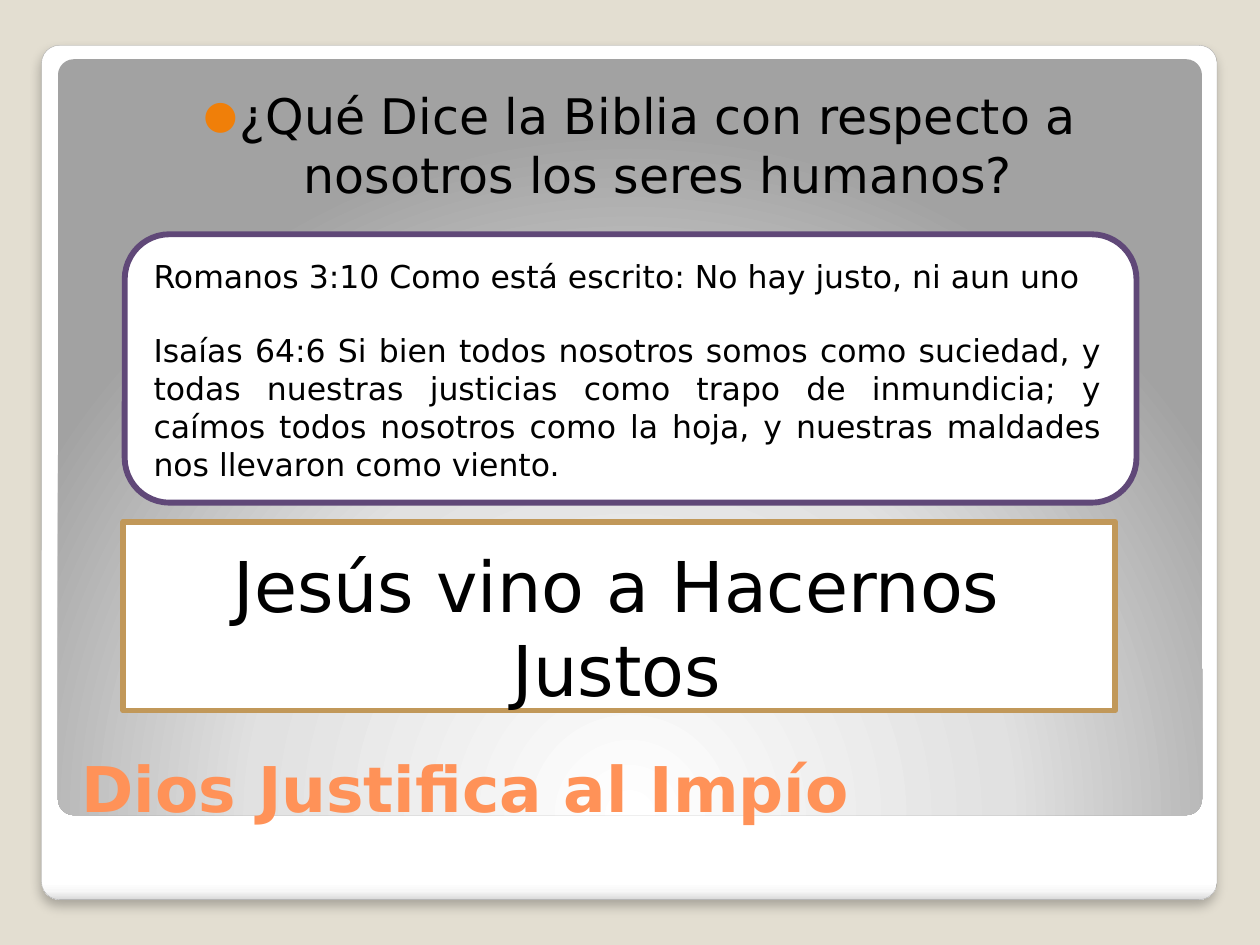
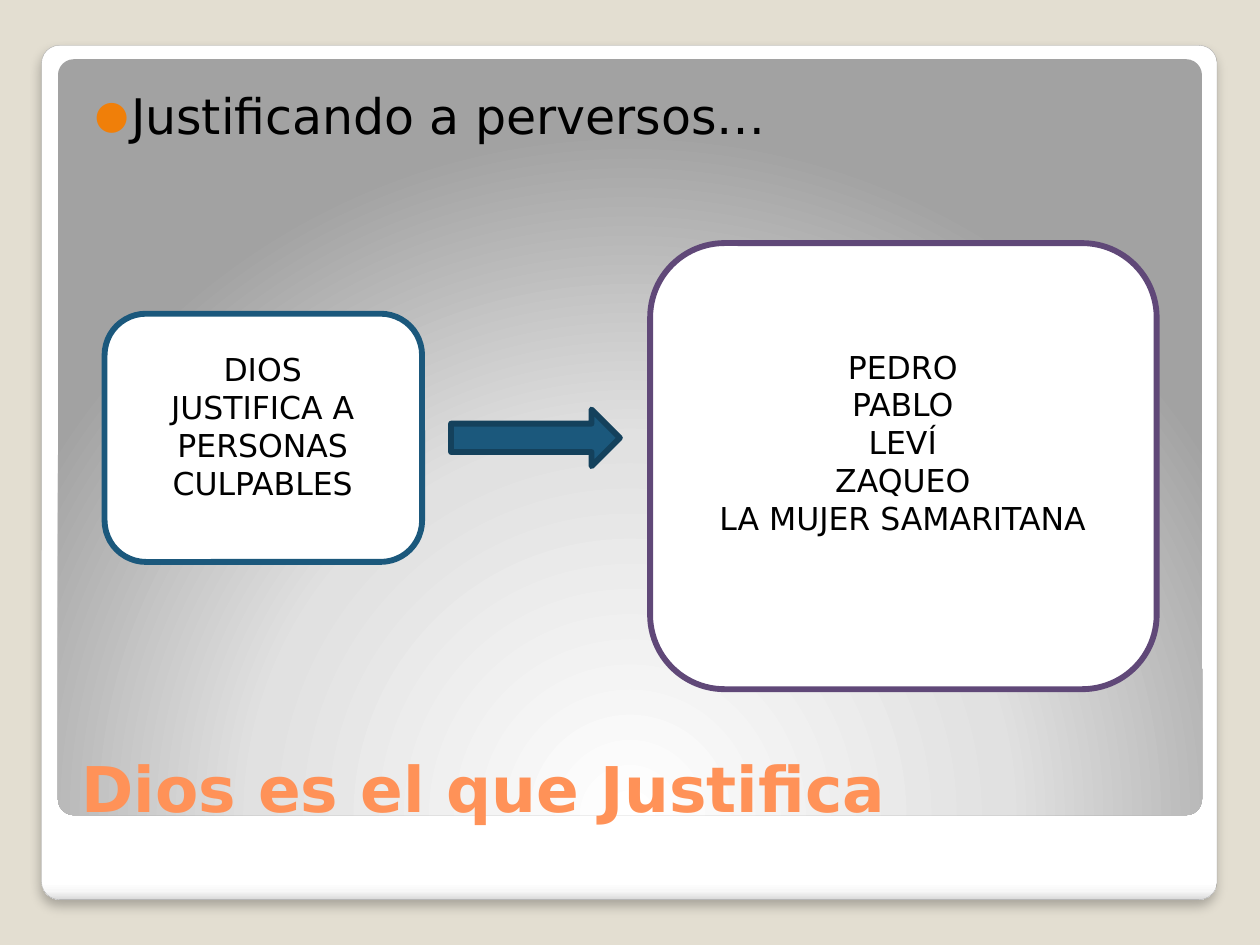
from dataclasses import dataclass

from lxml.etree import SubElement, fromstring
from pptx import Presentation
from pptx.dml.color import RGBColor
from pptx.enum.shapes import MSO_SHAPE
from pptx.enum.text import MSO_ANCHOR, PP_ALIGN
from pptx.oxml.ns import nsdecls, qn
from pptx.util import Inches, Pt


@dataclass(frozen=True)
class Theme:
    font: str = "DejaVu Sans"
    background: str = "E3DED1"
    frame_line: str = "A4A4A4"
    title: str = "FF9258"
    bullet: str = "F07F09"
    text: str = "000000"
    white: str = "FFFFFF"
    gold: str = "C19859"
    purple: str = "604878"
    blue: str = "1B587C"
    dark_blue: str = "14415C"
    title_size: float = 36
    question_size: float = 28
    banner_size: float = 40
    body_size: float = 18
    outline: float = 3.35
    hairline: float = 0.16
    corner: float = 0.021


THEME = Theme()
FRAME_STOPS = [(0, "FFFFFF"), (98, "FFFFFF"), (99, "F7F7F7"), (100, "DADADA")]
PANEL_STOPS = [(0, "FFFFFF"), (55, "E1E1E1"), (100, "A2A2A2")]
LINEAR = '<a:lin ang="5400000" scaled="0"/>'
RADIAL = ('<a:path path="circle">'
          '<a:fillToRect l="50000" t="175000" r="50000" b="-75000"/></a:path>')
SHADOW = ('<a:effectLst {}><a:outerShdw blurRad="76200" dist="50800" dir="5400000" '
          'algn="tl" rotWithShape="0"><a:srgbClr val="000000"><a:alpha val="25000"/>'
          '</a:srgbClr></a:outerShdw></a:effectLst>')

SLIDES = [
    {
        "title": "Dios Justifica al Impío",
        "lead": "¿Qué Dice la Biblia con respecto a nosotros los seres humanos?",
        "lead_align": PP_ALIGN.CENTER,
        "shapes": [
            (MSO_SHAPE.RECTANGLE, (0.98, 4.14, 7.87, 1.5), THEME.white, THEME.gold),
            (MSO_SHAPE.ROUNDED_RECTANGLE, (0.99, 1.86, 8.03, 2.13), THEME.white, THEME.purple),
        ],
        "texts": [
            ((0.96, 4.26, 7.87, 1.45), ["Jesús vino a Hacernos Justos"],
             THEME.banner_size, PP_ALIGN.CENTER, 0),
            ((1.12, 1.99, 7.72, 2.83), [
                "Romanos 3:10 Como está escrito: No hay justo, ni aun uno",
                "Isaías 64:6 Si bien todos nosotros somos como suciedad, y todas nuestras "
                "justicias como trapo de inmundicia; y caímos todos nosotros como la hoja, "
                "y nuestras maldades nos llevaron como viento.",
            ], THEME.body_size, PP_ALIGN.JUSTIFY, 21),
        ],
    },
    {
        "title": "Dios es el que Justifica",
        "lead": "Justificando a perversos…",
        "lead_align": PP_ALIGN.LEFT,
        "shapes": [
            (MSO_SHAPE.ROUNDED_RECTANGLE, (0.83, 2.49, 2.52, 1.97), THEME.white, THEME.blue),
            (MSO_SHAPE.RIGHT_ARROW, (3.58, 3.25, 1.34, 0.45), THEME.blue, THEME.dark_blue),
            (MSO_SHAPE.ROUNDED_RECTANGLE, (5.16, 1.93, 4.02, 3.54), THEME.white, THEME.purple),
        ],
        "texts": [
            ((1.06, 2.73, 2.05, 1.31), ["DIOS JUSTIFICA A PERSONAS CULPABLES"],
             THEME.body_size, PP_ALIGN.CENTER, 0),
            ((5.51, 2.71, 3.31, 1.92),
             ["PEDRO", "PABLO", "LEVÍ", "ZAQUEO", "LA MUJER SAMARITANA"],
             THEME.body_size, PP_ALIGN.CENTER, 0),
        ],
    },
]


def color(value):
    return RGBColor.from_string(value)


def place(bounds):
    return [Inches(length) for length in bounds]


def add_box(page, kind, bounds, fill, line=None, width=THEME.outline):
    box = page.shapes.add_shape(kind, *place(bounds))
    box.shadow.inherit = False
    box.fill.solid()
    box.fill.fore_color.rgb = color(fill)
    if line:
        box.line.color.rgb = color(line)
        box.line.width = Pt(width)
    else:
        box.line.fill.background()
    return box


def set_gradient(box, stops, direction):
    stop_xml = "".join(f'<a:gs pos="{position * 1000}"><a:srgbClr val="{value}"/></a:gs>'
                       for position, value in stops)
    gradient = fromstring(f'<a:gradFill {nsdecls("a")} rotWithShape="1">'
                          f'<a:gsLst>{stop_xml}</a:gsLst>{direction}</a:gradFill>')
    properties = box.element.spPr
    properties.replace(properties.find(qn("a:solidFill")), gradient)


def add_text(page, bounds, lines, size, align=PP_ALIGN.LEFT, gap=0,
             value=THEME.text, bold=False):
    box = page.shapes.add_textbox(*place(bounds))
    frame = box.text_frame
    frame.word_wrap = True
    for index, line in enumerate(lines):
        para = frame.add_paragraph() if index else frame.paragraphs[0]
        para.text = line
        para.alignment = align
        para.space_before = Pt(gap if index else 0)
        for span in para.runs:
            span.font.name = THEME.font
            span.font.size = Pt(size)
            span.font.bold = bold
            span.font.color.rgb = color(value)
    return frame


def add_bullet(para):
    properties = para._p.get_or_add_pPr()
    properties.set("marL", str(Inches(0.29)))
    properties.set("indent", str(-Inches(0.29)))
    bullet_color = SubElement(properties, qn("a:buClr"))
    SubElement(bullet_color, qn("a:srgbClr"), val=THEME.bullet)
    SubElement(properties, qn("a:buSzPct"), val="80000")
    SubElement(properties, qn("a:buFont"), typeface=THEME.font)
    SubElement(properties, qn("a:buChar"), char="●")


def add_backdrop(page):
    frame = add_box(page, MSO_SHAPE.ROUNDED_RECTANGLE, (0.33, 0.36, 9.33, 6.78),
                    THEME.white, THEME.frame_line, THEME.hairline)
    panel = add_box(page, MSO_SHAPE.ROUNDED_RECTANGLE, (0.46, 0.47, 9.08, 6), THEME.white)
    for box, stops, direction in ((frame, FRAME_STOPS, LINEAR), (panel, PANEL_STOPS, RADIAL)):
        box.adjustments[0] = THEME.corner
        set_gradient(box, stops, direction)
    properties = frame.element.spPr
    properties.replace(properties.find(qn("a:effectLst")),
                       fromstring(SHADOW.format(nsdecls("a"))))


def add_headings(page, content):
    title = add_text(page, (0.55, 5.45, 8.95, 1.15), [content["title"]],
                     THEME.title_size, value=THEME.title, bold=True)
    title.vertical_anchor = MSO_ANCHOR.BOTTOM
    lead = add_text(page, (0.55, 0.58, 8.95, 1.2), [content["lead"]],
                    THEME.question_size, content["lead_align"])
    lead.margin_left, lead.margin_top = Inches(0.2), Inches(0.1)
    lead.paragraphs[0].space_before = Pt(2.5)
    add_bullet(lead.paragraphs[0])


def main():
    deck = Presentation()
    deck.slide_width, deck.slide_height = Inches(10), Inches(7.5)
    for content in SLIDES:
        page = deck.slides.add_slide(deck.slide_layouts[6])
        page.background.fill.solid()
        page.background.fill.fore_color.rgb = color(THEME.background)
        add_backdrop(page)
        add_headings(page, content)
        for shape in content["shapes"]:
            add_box(page, *shape)
        for text in content["texts"]:
            add_text(page, *text)
    deck.save("out.pptx")


if __name__ == "__main__":
    main()
